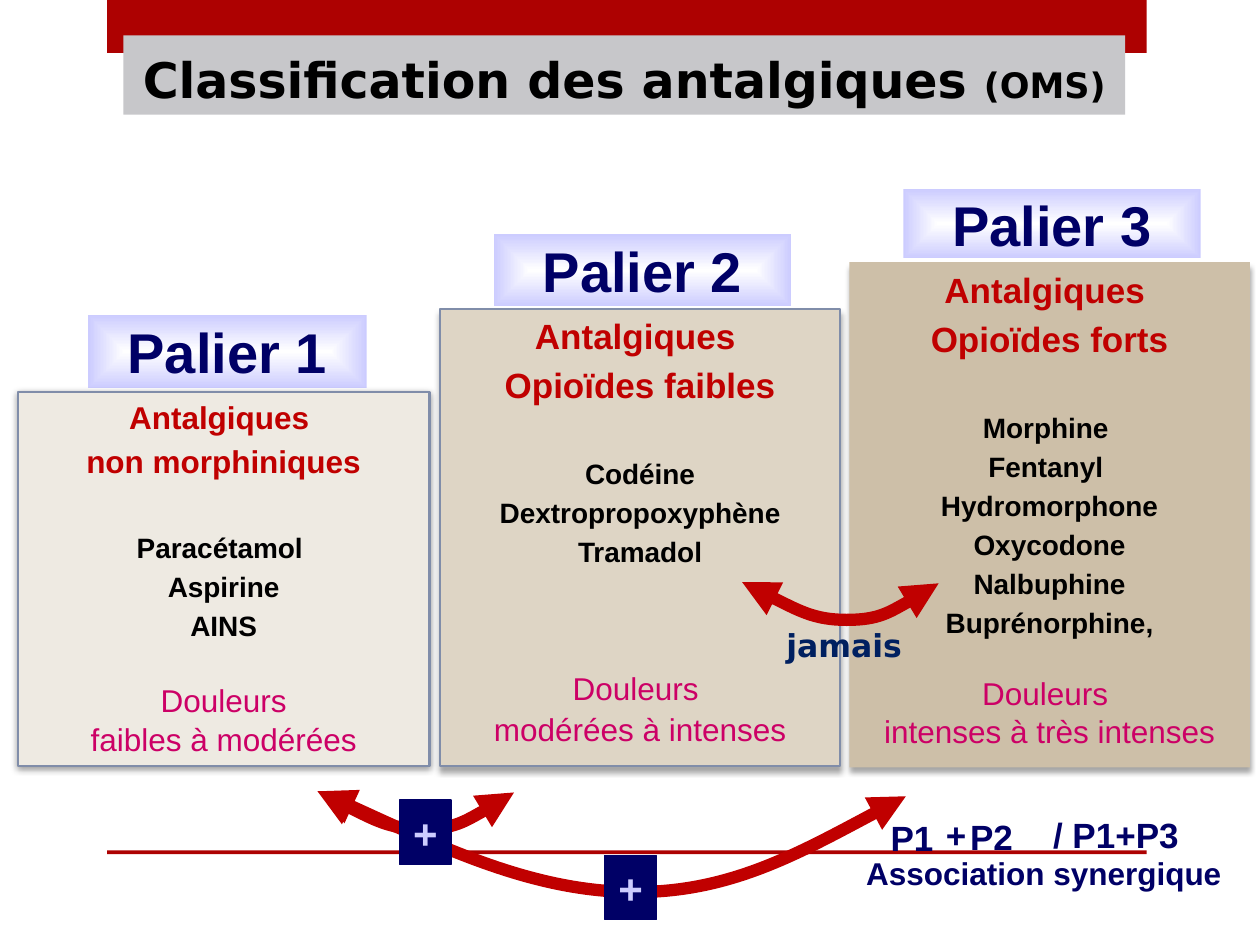
from lxml import etree
from pptx import Presentation
from pptx.dml.color import RGBColor
from pptx.enum.shapes import MSO_SHAPE
from pptx.enum.text import MSO_ANCHOR, MSO_AUTO_SIZE, PP_ALIGN
from pptx.oxml.ns import qn
from pptx.util import Inches, Pt

RECTANGLE = MSO_SHAPE.RECTANGLE
TOP, MIDDLE, BOTTOM = MSO_ANCHOR.TOP, MSO_ANCHOR.MIDDLE, MSO_ANCHOR.BOTTOM
CENTER, LEFT = PP_ALIGN.CENTER, PP_ALIGN.LEFT
NO_FIT = MSO_AUTO_SIZE.NONE

BAND, RED, PINK, NAVY = "AD0101", "C00000", "CC0066", "000066"
BLACK, WHITE, LILAC, EDGE = "000000", "FFFFFF", "CCCCFF", "808DA9"
DARK_BLUE, TITLE_GREY = "002060", "C7C7CA"
SPACE_SHARE = 0.2  # space before a line, as a share of its text size
DRUGS_GAP = 29  # points between the headings and the drugs

# Each step: label place, box place, fill, edge, shadow (opacity, blur, distance, angle),
# heading size, space before the pain lines, headings, drugs, pain lines
STEPS = [
    ("Palier 1", (0.7, 2.5, 2.21, 0.58), (0.14, 3.11, 3.27, 2.97), "EEEAE2", EDGE,
     (40, 4, 1, 88), 18, (22, 0.5), ["Antalgiques ", "non morphiniques"],
     ["Paracétamol ", "Aspirine", "AINS"],
     ["Douleurs", "faibles à modérées"]),
    ("Palier 2", (3.92, 1.86, 2.36, 0.57), (3.49, 2.45, 3.18, 3.63), "DED5C5", EDGE,
     (35, 3, 3, 90), 20, (57.5, 1.5), ["Antalgiques ", "Opioïdes faibles"],
     ["Codéine", "Dextropropoxyphène", "Tramadol"],
     ["Douleurs ", "modérées à intenses"]),
    ("Palier 3", (7.17, 1.5, 2.36, 0.55), (6.74, 2.08, 3.18, 4.01), "CDBFA8", None,
     (35, 3, 3, 90), 20, (19.5, 0.5), ["Antalgiques ", "Opioïdes forts"],
     ["Morphine ", "Fentanyl ", "Hydromorphone", "Oxycodone", "Nalbuphine", "Buprénorphine,"],
     ["Douleurs ", "intenses à très intenses"]),
]

# Bézier points: a start, then two controls and an end for each piece
LINK_1_2 = [(2.52, 6.28), (2.81, 6.43), (3.09, 6.58), (3.35, 6.58),
            (3.61, 6.58), (3.85, 6.44), (4.08, 6.29)]
LINK_1_3 = [(2.53, 6.28), (3.38, 6.67), (4.23, 7.07), (5.01, 7.08),
            (5.78, 7.09), (6.48, 6.7), (7.19, 6.32)]
LINK_2_3 = [(x + 3.37, y - 1.66) for x, y in LINK_1_2]


def color(value):
    return RGBColor.from_string(value)


def add_child(parent, tag, **attributes):
    return etree.SubElement(parent, qn(tag), {key: str(value) for key, value in attributes.items()})


def add_span(para, text, size=18, tint=NAVY, font="Arial", bold=True):
    span = para.add_run()
    span.text = text
    span.font.size, span.font.name, span.font.bold = Pt(size), font, bold
    span.font.color.rgb = color(tint)


def add_line(frame, text, align=CENTER, before=0, **style):
    """Write text in the first empty paragraph, or in a new one."""
    para = frame.paragraphs[0]
    if para.runs:
        para = frame.add_paragraph()
        para.space_before = Pt(before)
    para.alignment = align
    add_span(para, text, **style)
    return para


def add_box(page, place, fill=None, edge=None, weight=0.75, anchor=MIDDLE, wrap=True):
    box = page.shapes.add_shape(RECTANGLE, *map(Inches, place))
    box.shadow.inherit = False
    if fill:
        box.fill.solid()
        box.fill.fore_color.rgb = color(fill)
    if edge:
        box.line.color.rgb = color(edge)
        box.line.width = Pt(weight)
    else:
        box.line.fill.background()
    box.text_frame.vertical_anchor = anchor
    box.text_frame.word_wrap = wrap
    return box


def add_label(page, place, text, **style):
    box = page.shapes.add_textbox(*map(Inches, place))
    box.text_frame.word_wrap = False
    add_line(box.text_frame, text, **style)


def fill_from_center(box, inner, outer):
    box.fill.gradient()
    for stop, tint in zip(box.fill.gradient_stops, (inner, outer)):
        stop.color.rgb = color(tint)
    gradient = box._element.spPr.find(qn("a:gradFill"))
    gradient.remove(gradient.find(qn("a:lin")))
    shade = add_child(gradient, "a:path", path="shape")
    add_child(shade, "a:fillToRect", l=50000, t=50000, r=50000, b=50000)


def cast_shadow(box, opacity, blur, distance, angle):
    effects = box._element.spPr.find(qn("a:effectLst"))
    shadow = add_child(effects, "a:outerShdw", blurRad=Pt(blur), dist=Pt(distance),
                       dir=angle * 60000, rotWithShape=0)
    tint = add_child(shadow, "a:srgbClr", val=BLACK)
    add_child(tint, "a:alpha", val=opacity * 1000)


def add_curved_arrow(page, points):
    """Draw a double-headed Bézier curve, turning each three segments into one curve."""
    start, *rest = [(Inches(x), Inches(y)) for x, y in points]
    builder = page.shapes.build_freeform(*start)
    builder.add_line_segments(rest, close=False)
    arrow = builder.convert_to_shape()
    arrow.shadow.inherit = False
    arrow.fill.background()
    arrow.line.color.rgb = color(RED)
    arrow.line.width = Pt(7)
    segments = list(arrow._element.iter(qn("a:lnTo")))
    outline = segments[0].getparent()
    for index in range(0, len(segments), 3):
        curve = add_child(outline, "a:cubicBezTo")
        for segment in segments[index:index + 3]:
            curve.append(segment[0])
            outline.remove(segment)
    stroke = arrow._element.spPr.find(qn("a:ln"))
    for end in ("a:headEnd", "a:tailEnd"):
        add_child(stroke, end, type="triangle")


def add_title(page):
    title = page.shapes.title
    title.left, title.top, title.width, title.height = map(Inches, (0.98, 0.28, 7.95, 0.63))
    title.fill.solid()
    title.fill.fore_color.rgb = color(TITLE_GREY)
    frame = title.text_frame
    frame.auto_size, frame.vertical_anchor = NO_FIT, BOTTOM
    style = {"tint": BLACK, "font": "DejaVu Sans"}
    para = add_line(frame, "Classification des antalgiques ", size=28, **style)
    add_span(para, "(OMS)", size=20, **style)
    page.shapes._spTree.append(title._element)  # in front of the top band


def add_step(page, name, label_place, place, fill, edge, shadow, size, pain_gaps,
             headings, drugs, pains):
    label = add_box(page, label_place)
    fill_from_center(label, WHITE, LILAC)
    add_line(label.text_frame, name, size=32)

    box = add_box(page, place, fill, edge, weight=1.25, anchor=TOP)
    cast_shadow(box, *shadow)
    frame = box.text_frame
    for heading in headings:
        add_line(frame, heading, before=size * SPACE_SHARE, size=size, tint=RED)
    for index, drug in enumerate(drugs):
        gap = 16 * SPACE_SHARE if index else DRUGS_GAP
        add_line(frame, drug, before=gap, size=16, tint=BLACK)
    for pain, gap in zip(pains, pain_gaps):
        add_line(frame, pain, before=gap, tint=PINK, bold=False)


def add_associations(page):
    for points in (LINK_1_2, LINK_1_3, LINK_2_3):
        add_curved_arrow(page, points)
    for left, top in ((4.8, 6.79), (3.17, 6.35)):
        plus = add_box(page, (left, top, 0.41, 0.51), NAVY, NAVY, wrap=False)
        add_line(plus.text_frame, "+", size=24, tint=LILAC)
    for text, left, top, width in (("P1", 6.97, 6.43, 0.85), ("+", 7.41, 6.41, 0.4),
                                   ("P2", 7.6, 6.42, 0.55), ("/ P1+P3", 8.26, 6.41, 1.2)):
        add_label(page, (left, top, width, 0.44), text, align=LEFT, size=20)
    add_label(page, (6.76, 6.73, 3.05, 0.4), "Association synergique")
    add_label(page, (5.9, 4.92, 1.6, 0.4), "jamais", tint=DARK_BLUE, font="DejaVu Sans")


def main():
    deck = Presentation()
    deck.slide_width, deck.slide_height = Inches(10), Inches(7.5)
    page = deck.slides.add_slide(deck.slide_layouts.get_by_name("Title Only"))
    for top, height in ((0, 0.42), (6.75, 0.03)):
        add_box(page, (0.85, top, 8.25, height), BAND)
    add_title(page)
    for step in STEPS:
        add_step(page, *step)
    add_associations(page)
    deck.save("out.pptx")


if __name__ == "__main__":
    main()
